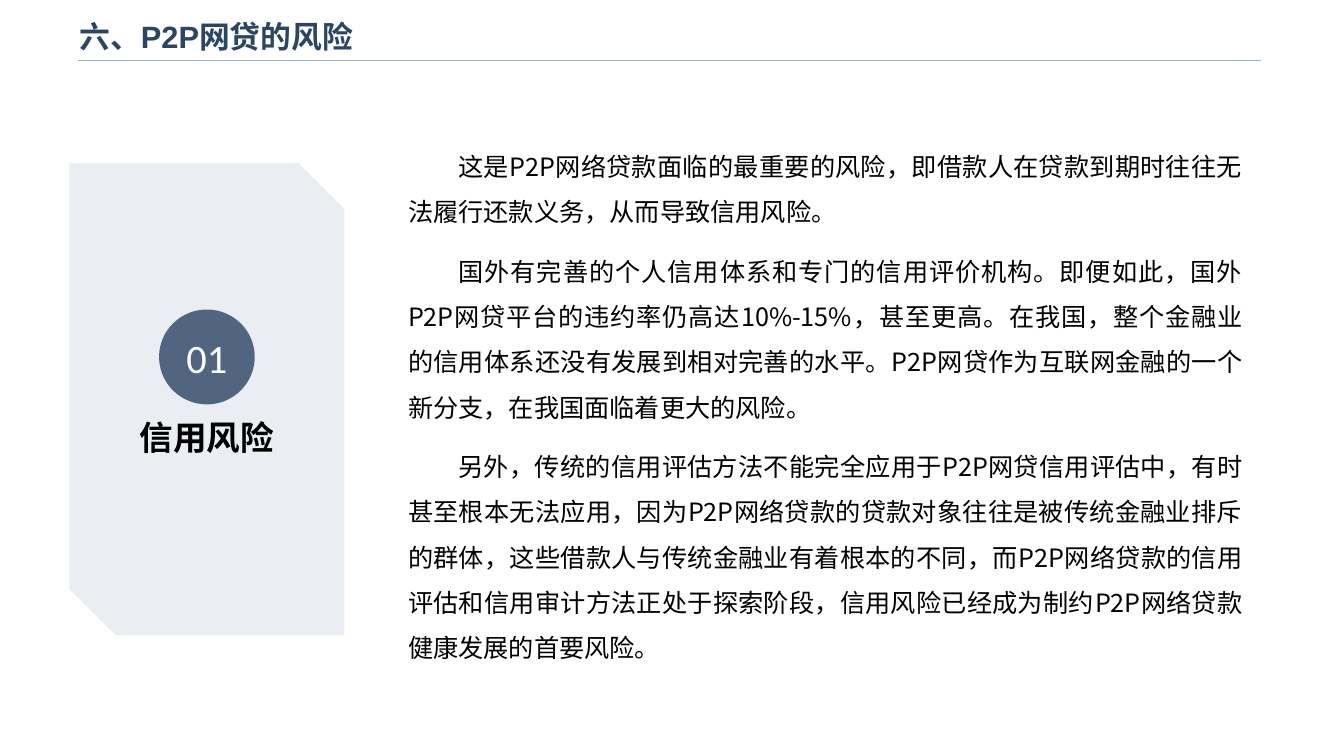
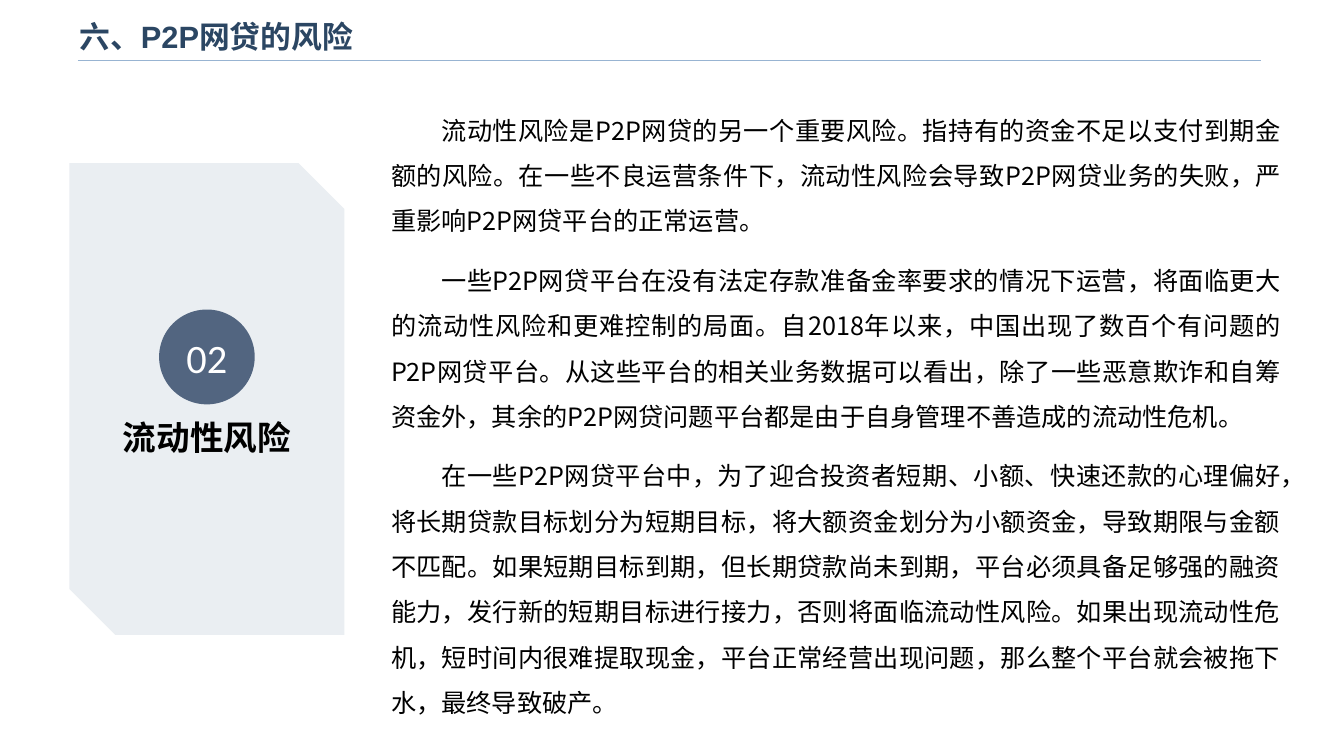
from lxml.etree import SubElement
from pptx import Presentation
from pptx.dml.color import RGBColor
from pptx.enum.lang import MSO_LANGUAGE_ID as Lang
from pptx.enum.shapes import MSO_CONNECTOR, MSO_SHAPE
from pptx.enum.text import MSO_ANCHOR as Anchor, MSO_AUTO_SIZE as AutoSize, PP_ALIGN as Align
from pptx.oxml.ns import qn
from pptx.util import Cm, Pt

# Content
HEADING = "六、P2P网贷的风险"
RISKS = [
    {
        "number": "01",
        "name": "信用风险",
        "body_box": (10.03, 3.3, 21.54, 13.67),
        "paragraphs": [
            "这是P2P网络贷款面临的最重要的风险，即借款人在贷款到期时往往无法履行还款义务，从而导致信用风险。",
            "国外有完善的个人信用体系和专门的信用评价机构。即便如此，国外P2P网贷平台的违约率仍高达10%-15%，"
            "甚至更高。在我国，整个金融业的信用体系还没有发展到相对完善的水平。P2P网贷作为互联网金融的一个新分支，"
            "在我国面临着更大的风险。",
            "另外，传统的信用评估方法不能完全应用于P2P网贷信用评估中，有时甚至根本无法应用，"
            "因为P2P网络贷款的贷款对象往往是被传统金融业排斥的群体，这些借款人与传统金融业有着根本的不同，"
            "而P2P网络贷款的信用评估和信用审计方法正处于探索阶段，信用风险已经成为制约P2P网络贷款健康发展的首要风险。",
        ],
    },
    {
        "number": "02",
        "name": "流动性风险",
        "body_box": (9.6, 2.39, 22.94, 15.98),
        "paragraphs": [
            "流动性风险是P2P网贷的另一个重要风险。指持有的资金不足以支付到期金额的风险。在一些不良运营条件下，"
            "流动性风险会导致P2P网贷业务的失败，严重影响P2P网贷平台的正常运营。",
            "一些P2P网贷平台在没有法定存款准备金率要求的情况下运营，将面临更大的流动性风险和更难控制的局面。"
            "自2018年以来，中国出现了数百个有问题的P2P网贷平台。从这些平台的相关业务数据可以看出，"
            "除了一些恶意欺诈和自筹资金外，其余的P2P网贷问题平台都是由于自身管理不善造成的流动性危机。",
            "在一些P2P网贷平台中，为了迎合投资者短期、小额、快速还款的心理偏好，将长期贷款目标划分为短期目标，"
            "将大额资金划分为小额资金，导致期限与金额不匹配。如果短期目标到期，但长期贷款尚未到期，"
            "平台必须具备足够强的融资能力，发行新的短期目标进行接力，否则将面临流动性风险。如果出现流动性危机，"
            "短时间内很难提取现金，平台正常经营出现问题，那么整个平台就会被拖下水，最终导致破产。",
        ],
    },
]

# Shared look
NAVY = RGBColor(0x2B, 0x46, 0x63)
SLATE = RGBColor(0x52, 0x65, 0x80)
MIST = RGBColor(0xEA, 0xEE, 0xF2)
RULE_BLUE = RGBColor(0x98, 0xB4, 0xD2)
BLACK = RGBColor(0, 0, 0)
WHITE = RGBColor(0xFF, 0xFF, 0xFF)
CJK = "Noto Sans CJK SC"

HEADING_FONT = {"name": "Arial", "size": Pt(22), "bold": True, "color": NAVY}
NAME_FONT = {"name": CJK, "size": Pt(24), "bold": True, "color": BLACK}
BODY_FONT = {"name": CJK, "size": Pt(18), "bold": False, "color": BLACK}
NUMBER_FONT = {"name": "Calibri", "size": Pt(28.8), "bold": False, "color": WHITE}

LEFT_ALIGNED = {"alignment": Align.LEFT}
CENTRED = {"alignment": Align.CENTER}
BODY_FLOW = {"alignment": Align.JUSTIFY, "line_spacing": 1.5,
             "space_before": Pt(0), "space_after": Pt(10)}
FIRST_LINE_INDENT = Cm(1.27)

# Left, top, width, height in centimetres
HEADING_BOX = (1.75, 0.23, 27.2, 1.35)
PANEL_BOX = (1.75, 4.11, 6.93, 11.89)
RULE_LEFT, RULE_RIGHT, RULE_TOP = 1.96, 31.78, 1.52


def lengths(box):
    return [Cm(value) for value in box]


def on_panel(top, width, height):
    """Box centred across the side panel."""
    left, _, panel_width, _ = PANEL_BOX
    return lengths((left + (panel_width - width) / 2, top, width, height))


def place(shape, box):
    shape.left, shape.top, shape.width, shape.height = lengths(box)


def write(paragraph, text, font_format, flow):
    for attribute, value in flow.items():
        setattr(paragraph, attribute, value)
    run = paragraph.add_run()
    run.text = text
    for attribute, value in font_format.items():
        if attribute == "color":
            run.font.color.rgb = value
        else:
            setattr(run.font, attribute, value)
    run.font.language_id = Lang.SIMPLIFIED_CHINESE
    SubElement(run._r.get_or_add_rPr(), qn("a:ea"), typeface=CJK)


def set_frame(frame, anchor):
    frame.word_wrap = True
    frame.auto_size = AutoSize.NONE
    frame.vertical_anchor = anchor


def add_filled(slide, preset, box, color):
    shape = slide.shapes.add_shape(preset, *box)
    shape.shadow.inherit = False
    shape.fill.solid()
    shape.fill.fore_color.rgb = color
    shape.line.fill.background()
    return shape


def add_heading_rule(slide, layout):
    """Draw the rule once and keep it on the layout."""
    rule = slide.shapes.add_connector(
        MSO_CONNECTOR.STRAIGHT, *lengths((RULE_LEFT, RULE_TOP, RULE_RIGHT, RULE_TOP)))
    rule.line.color.rgb = RULE_BLUE
    rule.line.width = Pt(1)
    SubElement(rule.element.spPr, qn("a:effectLst"))
    layout.shapes.element.append(rule.element)


def fill_body(body, risk):
    place(body, risk["body_box"])
    frame = body.text_frame
    set_frame(frame, Anchor.TOP)
    for index, text in enumerate(risk["paragraphs"]):
        paragraph = frame.add_paragraph() if index else frame.paragraphs[0]
        properties = paragraph._p.get_or_add_pPr()
        properties.set("marL", "0")
        properties.set("indent", str(FIRST_LINE_INDENT))
        SubElement(properties, qn("a:buNone"))
        write(paragraph, text, BODY_FONT, BODY_FLOW)


def add_risk_slide(deck, layout, risk):
    slide = deck.slides.add_slide(layout)
    heading, body = slide.placeholders

    set_frame(heading.text_frame, Anchor.MIDDLE)
    write(heading.text_frame.paragraphs[0], HEADING, HEADING_FONT, LEFT_ALIGNED)
    fill_body(body, risk)

    # Side panel with number and name
    add_filled(slide, MSO_SHAPE.SNIP_2_DIAG_RECTANGLE, lengths(PANEL_BOX), MIST)
    name = slide.shapes.add_textbox(*on_panel(10.39, 8.1, 1.27)).text_frame
    set_frame(name, Anchor.TOP)
    write(name.paragraphs[0], risk["name"], NAME_FONT, CENTRED)

    badge = add_filled(slide, MSO_SHAPE.OVAL, on_panel(7.8, 2.41, 2.39), SLATE)
    set_frame(badge.text_frame, Anchor.MIDDLE)
    write(badge.text_frame.paragraphs[0], risk["number"], NUMBER_FONT, CENTRED)
    return slide


def main():
    deck = Presentation()
    deck.slide_width, deck.slide_height = Cm(33.87), Cm(19.05)
    layout = deck.slide_layouts.get_by_name("Title and Content")
    place(layout.placeholders[0], HEADING_BOX)
    slides = [add_risk_slide(deck, layout, risk) for risk in RISKS]
    add_heading_rule(slides[0], layout)
    deck.save("out.pptx")


if __name__ == "__main__":
    main()
